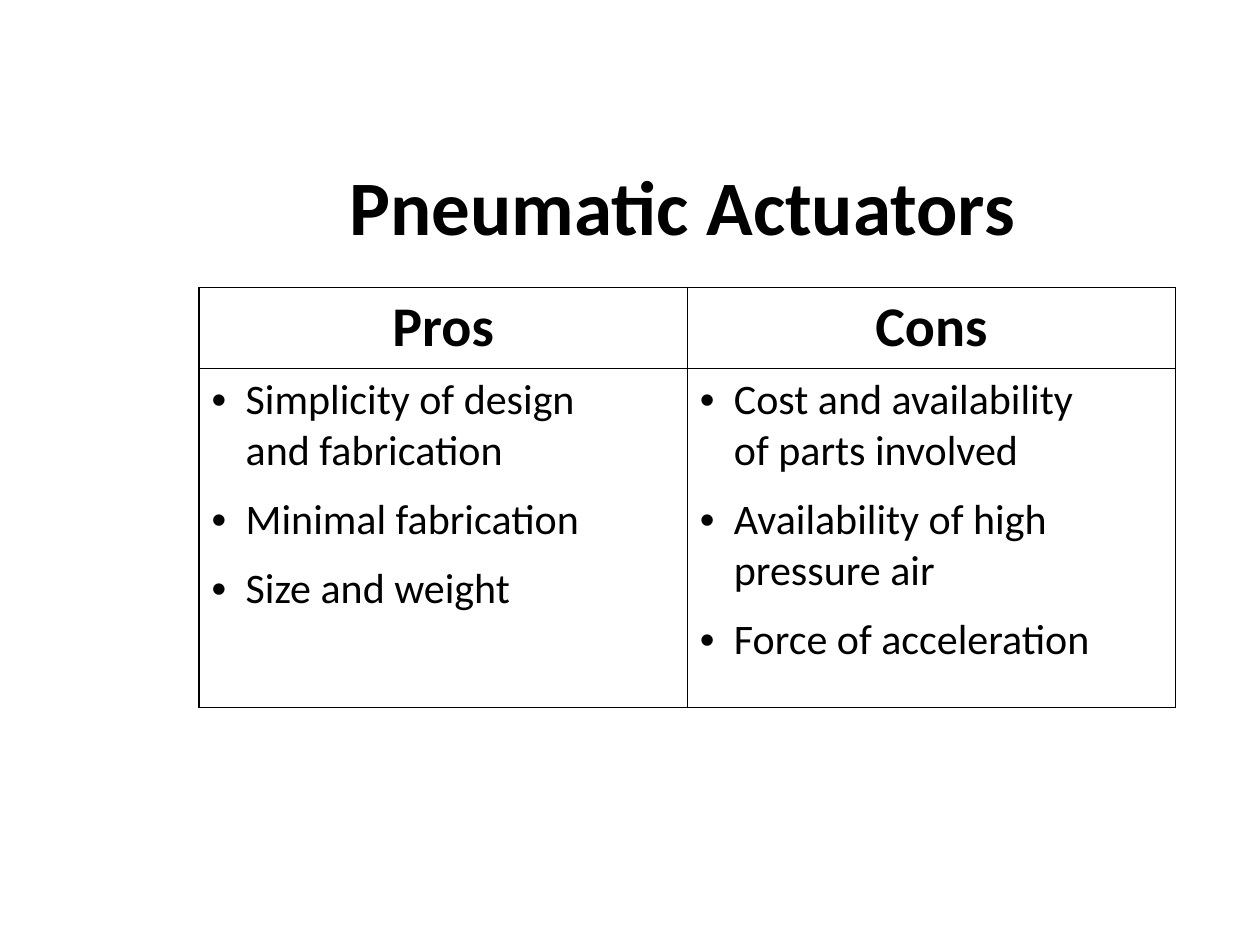
from lxml.etree import SubElement
from pptx import Presentation
from pptx.dml.color import RGBColor
from pptx.enum.text import MSO_ANCHOR as Anchor, PP_ALIGN as Align
from pptx.oxml.ns import qn
from pptx.util import Inches, Pt

BLACK = "000000"
COLUMNS = {
    "Pros": ["Simplicity of design\vand fabrication", "Minimal fabrication",
             "Size and weight"],
    "Cons": ["Cost and availability\vof parts involved",
             "Availability of high\vpressure air", "Force of acceleration"],
}


def color(hex_string):
    """Return the colour for a hex string."""
    return RGBColor.from_string(hex_string)


def add_bullet(paragraph, indent):
    """Give a paragraph a hanging bullet."""
    properties = paragraph._p.get_or_add_pPr()
    properties.set("marL", str(indent))
    properties.set("indent", str(-indent))
    SubElement(properties, qn("a:buFont"), typeface="Arial")
    SubElement(properties, qn("a:buChar"), char="•")


def write_text(frame, lines, size, bold=False, align=Align.LEFT, after=0, bullet=False):
    """Write one formatted paragraph for each line."""
    frame.word_wrap = True
    for index, line in enumerate(lines):
        paragraph = frame.add_paragraph() if index else frame.paragraphs[0]
        paragraph.text = line
        paragraph.alignment = align
        paragraph.space_after = Pt(after)
        if bullet:
            add_bullet(paragraph, Inches(0.27))
        for run in paragraph.runs:
            run.font.name = "Calibri"
            run.font.size = Pt(size)
            run.font.bold = bold
            run.font.color.rgb = color(BLACK)


def style_cell(cell):
    """Give a cell thin black borders and no fill."""
    properties = cell._tc.get_or_add_tcPr()
    for side in ("lnL", "lnR", "lnT", "lnB"):
        line = SubElement(properties, qn(f"a:{side}"), w=str(Pt(1)))
        fill = SubElement(line, qn("a:solidFill"))
        SubElement(fill, qn("a:srgbClr"), val=BLACK)
    cell.fill.background()


def place_title(slide, text, left, top, width, height):
    """Place the slide title in the given box."""
    title = slide.shapes.title
    title.left, title.top, title.width, title.height = left, top, width, height
    title.text_frame.vertical_anchor = Anchor.MIDDLE
    write_text(title.text_frame, [text], size=44, bold=True, align=Align.CENTER)


def place_comparison(slide, columns, left, top, width, height):
    """Place a table with a heading and a bullet list in each column."""
    table = slide.shapes.add_table(2, len(columns), left, top, width, height).table
    table.rows[0].height = Inches(0.64)
    table.rows[1].height = height - table.rows[0].height
    for index, (heading, points) in enumerate(columns.items()):
        header, body = table.cell(0, index), table.cell(1, index)
        style_cell(header)
        style_cell(body)
        write_text(header.text_frame, [heading], size=32, bold=True, align=Align.CENTER)
        write_text(body.text_frame, points, size=24, after=10, bullet=True)


def main():
    """Build and save the presentation."""
    presentation = Presentation()
    presentation.slide_width, presentation.slide_height = Inches(10), Inches(7.5)
    slide = presentation.slides.add_slide(presentation.slide_layouts[5])
    place_title(slide, "Pneumatic Actuators",
                Inches(0.92), Inches(1), Inches(9), Inches(1.25))
    place_comparison(slide, COLUMNS,
                     Inches(1.58), Inches(2.28), Inches(7.75), Inches(3.33))
    presentation.save("out.pptx")


if __name__ == "__main__":
    main()
